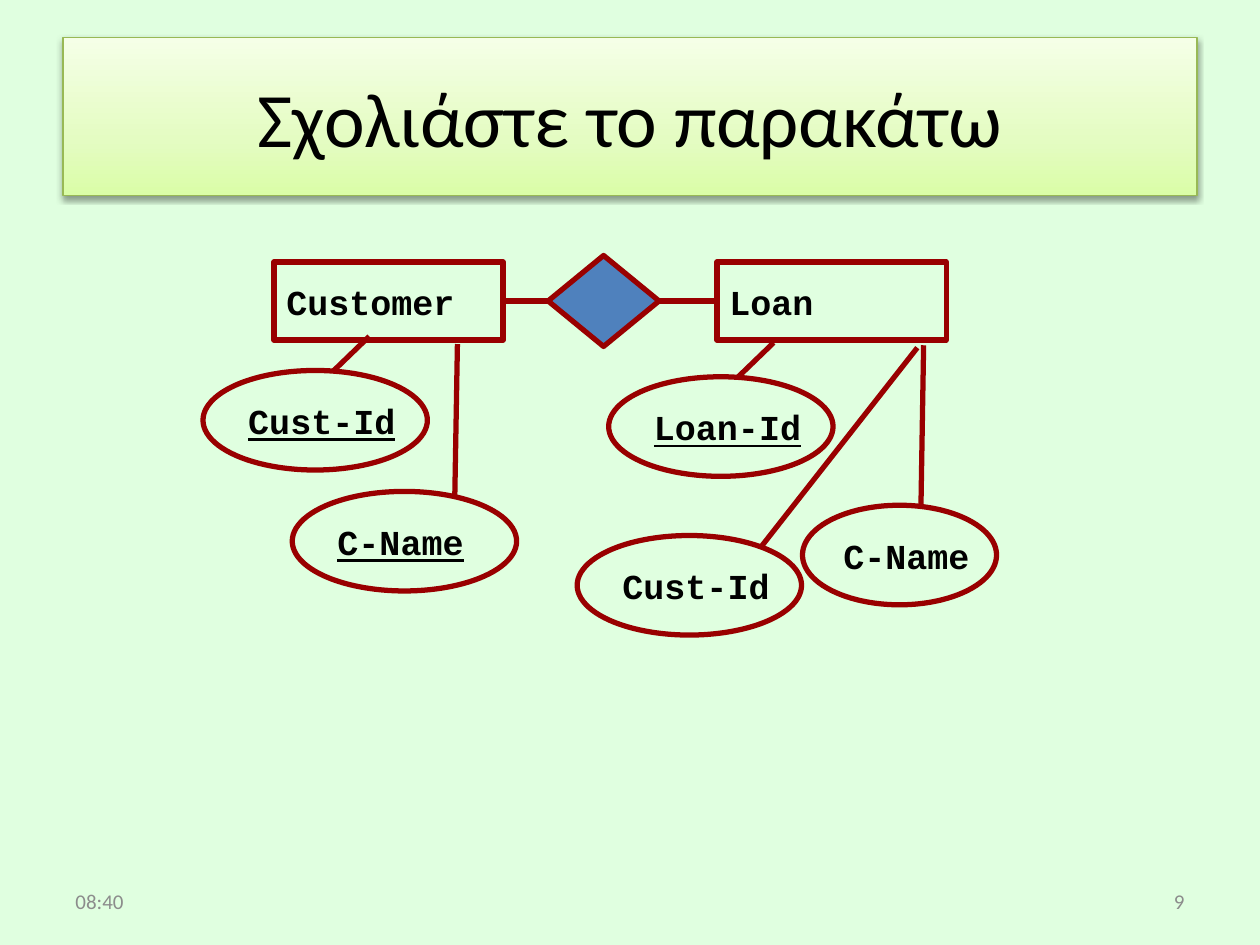
from copy import deepcopy

from lxml.etree import SubElement
from pptx import Presentation
from pptx.dml.color import RGBColor
from pptx.enum.shapes import MSO_CONNECTOR, MSO_SHAPE
from pptx.enum.text import MSO_ANCHOR, PP_ALIGN
from pptx.oxml.ns import qn
from pptx.util import Pt

COLORS = {
    "background": "E0FFE0",
    "title_border": "98B955",
    "outline": "990000",
    "diamond": "4F81BD",
    "text": "000000",
    "footer": "8C8C8C",
}
TITLE_GRADIENT = [(0, "DAFDA7"), (0.35, "E4FCC2"), (1, "F5FFE7")]


def color(name):
    return RGBColor.from_string(COLORS[name])


def add_node(kind, left, top, width, height, text="", underline=False):
    shape = slide.shapes.add_shape(kind, Pt(left), Pt(top), Pt(width), Pt(height))
    shape.shadow.inherit = False
    shape.fill.background()
    shape.line.color.rgb = color("outline")
    shape.line.width = Pt(3)
    if text:
        frame = shape.text_frame
        frame.word_wrap = False
        frame.vertical_anchor = MSO_ANCHOR.MIDDLE
        paragraph = frame.paragraphs[0]
        paragraph.text = text
        paragraph.alignment = PP_ALIGN.LEFT
        font = paragraph.font
        font.name, font.size, font.bold = "Courier New", Pt(20), True
        font.color.rgb = color("text")
        if underline:
            font.underline = True
    return shape


presentation = Presentation()
presentation.slide_width, presentation.slide_height = Pt(720), Pt(540)
slide = presentation.slides.add_slide(presentation.slide_layouts[5])
slide.background.fill.solid()
slide.background.fill.fore_color.rgb = color("background")

# Title with gradient, border and shadow
title = slide.shapes.title
title.left, title.top, title.width, title.height = Pt(36), Pt(21.6), Pt(648), Pt(90)
title.fill.gradient()
title.fill.gradient_angle = 90
stop_list = title.element.spPr.find(qn("a:gradFill")).find(qn("a:gsLst"))
stop_list.append(deepcopy(stop_list[0]))
for stop, (position, hex_color) in zip(title.fill.gradient_stops, TITLE_GRADIENT):
    stop.position = position
    stop.color.rgb = RGBColor.from_string(hex_color)
title.line.color.rgb = color("title_border")
title.line.width = Pt(0.75)
title.shadow.inherit = False
effects = title.element.spPr.find(qn("a:effectLst"))
shadow = SubElement(effects, qn("a:outerShdw"), blurRad=str(Pt(3.1)),
                    dist=str(Pt(1.6)), dir="5400000", rotWithShape="0")
shadow_color = SubElement(shadow, qn("a:srgbClr"), val="000000")
SubElement(shadow_color, qn("a:alpha"), val="38000")
title.text_frame.vertical_anchor = MSO_ANCHOR.MIDDLE
paragraph = title.text_frame.paragraphs[0]
paragraph.text = "Σχολιάστε το παρακάτω"
paragraph.alignment = PP_ALIGN.CENTER
paragraph.font.name, paragraph.font.size = "Calibri", Pt(44)
paragraph.font.color.rgb = color("text")

# Time and slide number
for left, text, alignment in [(36, "08:40", PP_ALIGN.LEFT), (516, "9", PP_ALIGN.RIGHT)]:
    box = slide.shapes.add_textbox(Pt(left), Pt(500.5), Pt(168), Pt(28.75))
    box.text_frame.word_wrap = True
    box.text_frame.vertical_anchor = MSO_ANCHOR.MIDDLE
    paragraph = box.text_frame.paragraphs[0]
    paragraph.text = text
    paragraph.alignment = alignment
    paragraph.font.name, paragraph.font.size = "Calibri", Pt(12)
    paragraph.font.color.rgb = color("footer")

# Entities and their relationship, centred on one axis
axis = 172
entity_width, entity_height = 131, 44.6
entity_top = axis - entity_height / 2
customer = add_node(MSO_SHAPE.RECTANGLE, 156.5, entity_top,
                    entity_width, entity_height, "Customer")
loan = add_node(MSO_SHAPE.RECTANGLE, 409.7, entity_top,
                entity_width, entity_height, "Loan")
relationship = add_node(MSO_SHAPE.DIAMOND, 313.2, axis - 26, 63.4, 52)
relationship.fill.solid()
relationship.fill.fore_color.rgb = color("diamond")

# Attributes: left, top, width, text, underlined key
attributes = [
    (116, 211.7, 128.2, "Cust-Id", True),
    (167, 280.8, 128.2, "C-Name", True),
    (347.8, 215.3, 128.2, "Loan-Id", True),
    (329.8, 306, 128.2, "Cust-Id", False),
    (458.6, 288.7, 110.9, "C-Name", False),
]
for left, top, width, text, is_key in attributes:
    add_node(MSO_SHAPE.OVAL, left, top, width, 56.9, text, is_key)

# Lines from entities to attributes
links = [
    (211, 192.2, 190.8, 211.7),
    (261.4, 196.6, 259.9, 283.7),
    (442.1, 195.8, 421.9, 215.3),
    (524.2, 198.7, 434.9, 312.5),
    (527.8, 197.3, 526.3, 288),
]
connectors = [
    slide.shapes.add_connector(MSO_CONNECTOR.STRAIGHT, *[Pt(value) for value in link])
    for link in links
]

# Lines between entities and relationship, joined at side middles
for start, end in [(customer, relationship), (relationship, loan)]:
    connector = slide.shapes.add_connector(MSO_CONNECTOR.STRAIGHT, 0, 0, 0, 0)
    connector.begin_connect(start, 3)
    connector.end_connect(end, 1)
    connectors.append(connector)

for connector in connectors:
    connector.line.color.rgb = color("outline")
    connector.line.width = Pt(3)
    SubElement(connector.element.spPr, qn("a:effectLst"))

presentation.save("out.pptx")
